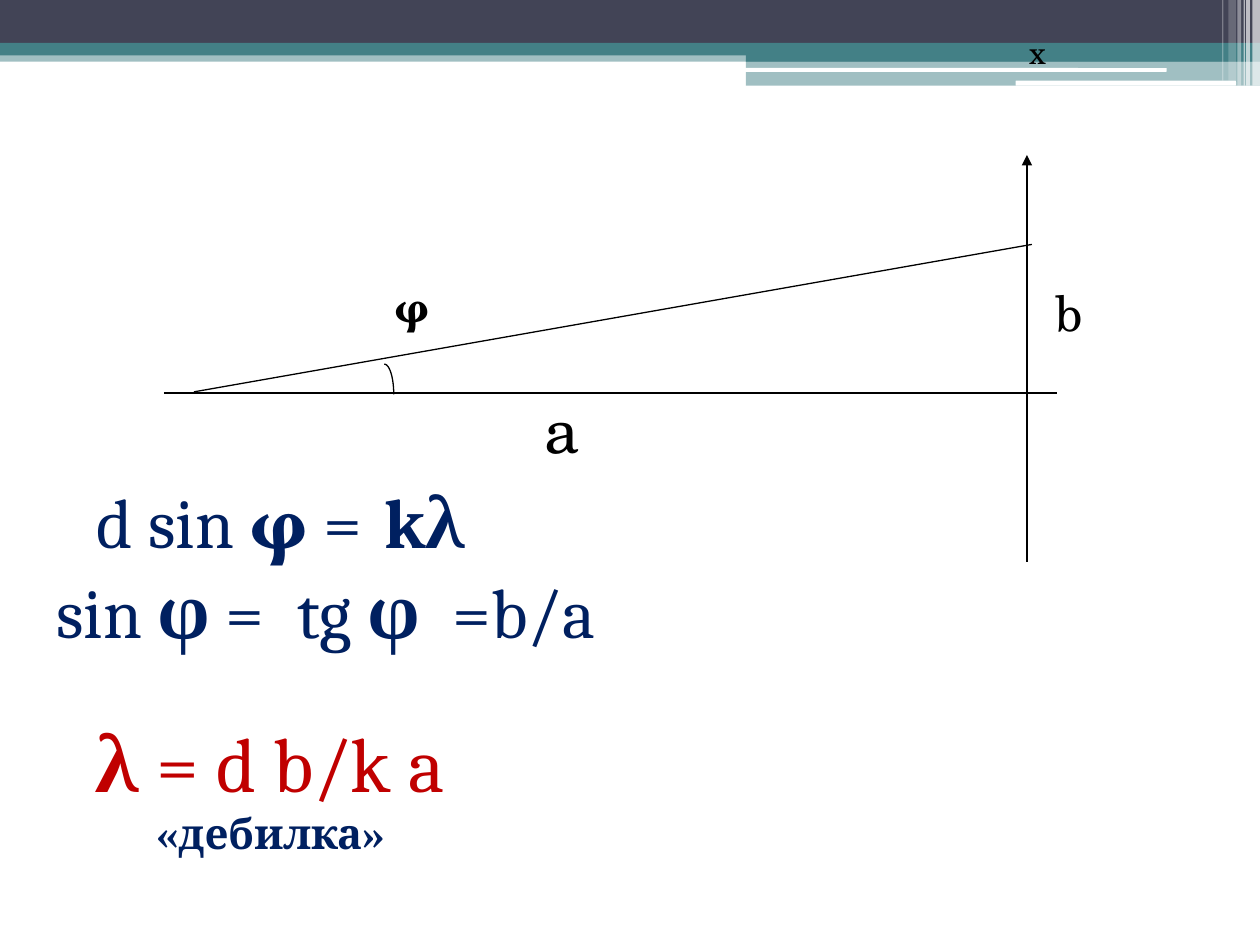
import math
from lxml import etree
from pptx import Presentation
from pptx import util as u
from pptx.dml import color
from pptx.enum import shapes, text
from pptx.oxml import ns

deck = Presentation()
deck.slide_width, deck.slide_height = u.Inches(10), u.Inches(7.5)
page = deck.slides.add_slide(deck.slide_layouts[6])
CELL = deck.slide_width / 100
NAVY, RED, BLACK, WHITE, TEAL = "002060", "C00000", "000000", "FFFFFF", "438086"
SERIF, SCHOOL = "Cambria", "TeX Gyre Schola"


def grid(*cells):
    return [u.Emu(round(cell * CELL)) for cell in cells]


def paint(target, value, opacity=100):
    target.solid()
    target.fore_color.rgb = color.RGBColor.from_string(value)
    if opacity < 100:
        tint = target.fore_color._xFill[0]
        etree.SubElement(tint, ns.qn("a:alpha")).set("val", str(opacity * 1000))


RECT, ROUND = shapes.MSO_SHAPE.RECTANGLE, shapes.MSO_SHAPE.ROUNDED_RECTANGLE
bands = [
    (RECT, 0, 4, 100, 0.9, TEAL, 50),
    (RECT, 0, 0, 100, 3.4, "424456", 100),
    (RECT, 0, 3.4, 100, 1, TEAL, 100),
    (RECT, 59.2, 3.9, 40.8, 1, TEAL, 100),
    (RECT, 59.2, 4.8, 40.8, 2, TEAL, 50),
    (ROUND, 59.1, 5.4, 33.5, 0.3, WHITE, 100),
    (ROUND, 80.6, 6.4, 17.5, 0.4, WHITE, 100),
]
stripes = [(99.4, 0.6, 6.8, 65), (98.9, 0.3, 6.8, 65), (98.7, 0.1, 6.8, 60),
           (98.2, 0.3, 6.8, 40), (97.5, 0.6, 6.4, 20), (97, 0.1, 6.4, 30)]
bands += [(RECT, left, 0, width, height, WHITE, opacity)
          for left, width, height, opacity in stripes]
for kind, left, top, width, height, fill, opacity in bands:
    band = page.shapes.add_shape(kind, *grid(left, top, width, height))
    band.shadow.inherit = False
    band.line.fill.background()
    paint(band.fill, fill, opacity)

baseline, screen_axis, ray = (13, 31.2, 83.9, 31.2), (81.5, 44.6, 81.5, 12.3), (15.4, 31.1, 81.9, 19.4)
for ends in (baseline, screen_axis, ray):
    line = page.shapes.add_connector(shapes.MSO_CONNECTOR.STRAIGHT, *grid(*ends))
    line.line.width = u.Pt(0.75)
    paint(line.line.fill, BLACK)
    etree.SubElement(line._element.spPr, ns.qn("a:effectLst"))
    if ends == screen_axis:
        etree.SubElement(line.line._ln, ns.qn("a:tailEnd")).set("type", "triangle")

angles = [math.pi / 2 * step / 12 for step in range(13)]
points = [grid(30.5 + 0.75 * math.sin(angle), 31.3 - 2.4 * math.cos(angle)) for angle in angles]
outline = page.shapes.build_freeform(*points[0])
outline.add_line_segments(points[1:], close=False)
angle_mark = outline.convert_to_shape()
angle_mark.shadow.inherit = False
angle_mark.fill.background()
angle_mark.line.width = u.Pt(0.75)
paint(angle_mark.line.fill, BLACK)

LEFT, CENTER = text.PP_ALIGN.LEFT, text.PP_ALIGN.CENTER
TOP, MIDDLE = text.MSO_ANCHOR.TOP, text.MSO_ANCHOR.MIDDLE
labels = [
    ((80.7, 2.1, 6.3, 4), TOP, True, LEFT, [("х", 18, SCHOOL, BLACK, False)]),
    ((42.2, 30.5, 8.7, 7.1), TOP, True, LEFT, [("a", 36, SCHOOL, BLACK, False)]),
    ((82.8, 21.9, 4.7, 5.7), TOP, True, LEFT, [("b", 28, SCHOOL, BLACK, False)]),
    ((6.7, 37.5, 26.8, 7.7), MIDDLE, True, LEFT,
     [("d sin ", 40, SERIF, NAVY, False), ("φ", 40, SCHOOL, NAVY, True), (" =", 40, SERIF, NAVY, False)]),
    ((29.5, 37.5, 10.3, 7.7), MIDDLE, False, LEFT, [("kλ", 40, SERIF, NAVY, True)]),
    ((3.5, 44.6, 47.1, 7.7), MIDDLE, False, LEFT,
     [("sin ", 40, SERIF, NAVY, False), ("φ", 40, SERIF, NAVY, True), (" =", 40, SERIF, NAVY, False),
      (" ", 40, SERIF, NAVY, False), ("tg", 40, SERIF, NAVY, False), (" φ", 40, SERIF, NAVY, True),
      (" ", 40, SERIF, NAVY, True), ("=b/a", 40, SERIF, NAVY, False)]),
    ((30.3, 21.8, 3.9, 5), TOP, True, LEFT, [("φ", 24, SCHOOL, BLACK, True)]),
    ((6.2, 56.3, 30.5, 12.5), TOP, True, CENTER,
     [("λ", 44, SERIF, RED, True), (" = d b/k a ", 44, SERIF, RED, False),
      ("«дебилка»", 24, SERIF, NAVY, True)]),
]
for place, anchor, wrap, align, pieces in labels:
    box = page.shapes.add_textbox(*grid(*place))
    frame = box.text_frame
    frame.word_wrap = wrap
    frame.auto_size = text.MSO_AUTO_SIZE.SHAPE_TO_FIT_TEXT
    frame.vertical_anchor = anchor
    para = frame.paragraphs[0]
    para.alignment = align
    for words, size, face, ink, bold in pieces:
        span = para.add_run()
        span.text = words
        span.font.size, span.font.name, span.font.bold = u.Pt(size), face, bold
        paint(span.font.fill, ink)
        if words == " ":
            span.font._element.set("spc", "1000")

deck.save("out.pptx")
